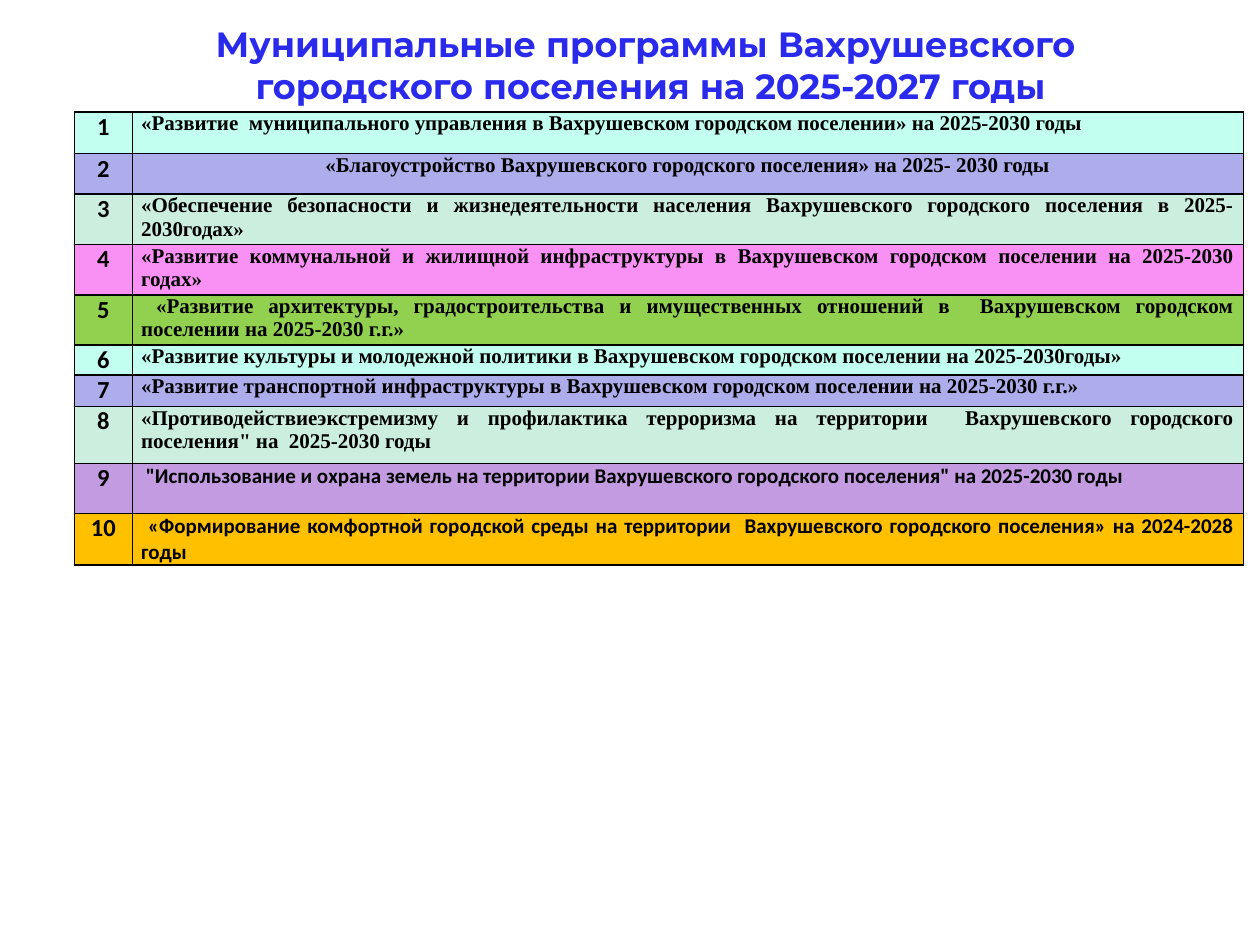
from lxml.etree import SubElement
from pptx import Presentation
from pptx.dml.color import RGBColor
from pptx.enum.text import MSO_ANCHOR, MSO_AUTO_SIZE, PP_ALIGN
from pptx.oxml.ns import qn
from pptx.util import Inches, Pt

BLACK = RGBColor(0x00, 0x00, 0x00)
BLUE = RGBColor(0x2A, 0x2A, 0xED)
AQUA = RGBColor(0xC2, 0xFF, 0xF0)
LAVENDER = RGBColor(0xAD, 0xAD, 0xEB)
MINT = RGBColor(0xCC, 0xEE, 0xDF)
PINK = RGBColor(0xF9, 0x91, 0xF4)
GREEN = RGBColor(0x92, 0xD0, 0x50)
PURPLE = RGBColor(0xC3, 0x9B, 0xE1)
AMBER = RGBColor(0xFF, 0xC0, 0x00)

SERIF, SANS = "Times New Roman", "Calibri"
CENTER, JUSTIFY = PP_ALIGN.CENTER, PP_ALIGN.JUSTIFY

TITLE = "Муниципальные программы Вахрушевского\n городского поселения на 2025-2027 годы"
PROGRAMMES = [
    (0.33, AQUA, SERIF, JUSTIFY, "«Развитие  муниципального управления в Вахрушевском городском поселении» на 2025-2030 годы"),
    (0.32, LAVENDER, SERIF, CENTER, "«Благоустройство Вахрушевского городского поселения» на 2025- 2030 годы"),
    (0.4, MINT, SERIF, JUSTIFY, "«Обеспечение безопасности и жизнедеятельности населения Вахрушевского городского поселения в 2025-2030годах»"),
    (0.4, PINK, SERIF, JUSTIFY, "«Развитие коммунальной и жилищной инфраструктуры в Вахрушевском городском поселении на 2025-2030 годах»"),
    (0.4, GREEN, SERIF, JUSTIFY, " «Развитие архитектуры, градостроительства и имущественных отношений в  Вахрушевском городском поселении на 2025-2030 г.г.»"),
    (0.23, AQUA, SERIF, JUSTIFY, "«Развитие культуры и молодежной политики в Вахрушевском городском поселении на 2025-2030годы»"),
    (0.25, LAVENDER, SERIF, JUSTIFY, "«Развитие транспортной инфраструктуры в Вахрушевском городском поселении на 2025-2030 г.г.»"),
    (0.45, MINT, SERIF, JUSTIFY, "«Противодействиеэкстремизму и профилактика терроризма на территории  Вахрушевского городского поселения\" на  2025-2030 годы"),
    (0.4, PURPLE, SANS, JUSTIFY, " \"Использование и охрана земель на территории Вахрушевского городского поселения\" на 2025-2030 годы"),
    (0.4, AMBER, SANS, JUSTIFY, " «Формирование комфортной городской среды на территории  Вахрушевского городского поселения» на 2024-2028 годы"),
]


def format_text(tf, font, size, color, align):
    """Apply one bold font and alignment to all the text in a frame."""
    for p in tf.paragraphs:
        p.alignment = align
        for r in p.runs:
            r.font.name = font
            r.font.size = Pt(size)
            r.font.bold = True
            r.font.color.rgb = color


def add_title(s):
    """Place and format the slide title."""
    sp = s.shapes.title
    sp.left, sp.top = Inches(0.91), Inches(0.13)
    sp.width, sp.height = Inches(8.43), Inches(0.77)
    tf = sp.text_frame
    tf.text = TITLE
    tf.word_wrap = True
    tf.auto_size = MSO_AUTO_SIZE.NONE
    tf.vertical_anchor = MSO_ANCHOR.TOP
    format_text(tf, "Montserrat", 20, BLUE, CENTER)


def set_borders(cell):
    """Draw a thin black line on every side of a cell."""
    tcPr = cell._tc.get_or_add_tcPr()
    for side in ("a:lnL", "a:lnR", "a:lnT", "a:lnB"):
        ln = SubElement(tcPr, qn(side), w=str(Pt(1)))
        fill = SubElement(ln, qn("a:solidFill"))
        SubElement(fill, qn("a:srgbClr"), val=str(BLACK))


def fill_cell(cell, text, font, size, align, fill):
    """Write one table cell with its borders and fill."""
    cell.margin_left = cell.margin_right = Inches(0.07)
    cell.margin_top = cell.margin_bottom = 0
    set_borders(cell)
    cell.fill.solid()
    cell.fill.fore_color.rgb = fill
    tf = cell.text_frame
    tf.text = text
    format_text(tf, font, size, BLACK, align)
    tf.paragraphs[0].space_after = Pt(0 if text.startswith("«Благо") else 10)


def add_programmes(s):
    """Add the numbered table of programmes."""
    height = sum(row[0] for row in PROGRAMMES)
    table = s.shapes.add_table(len(PROGRAMMES), 2, Inches(0.59), Inches(0.89),
                               Inches(9.28), Inches(height)).table
    table.first_row = table.horz_banding = False
    table.columns[0].width = Inches(0.46)
    table.columns[1].width = Inches(8.82)
    for i, (row_height, fill, font, align, text) in enumerate(PROGRAMMES):
        table.rows[i].height = Inches(row_height)
        fill_cell(table.cell(i, 0), str(i + 1), SANS, 14, CENTER, fill)
        fill_cell(table.cell(i, 1), text, font, 12, align, fill)


def main():
    """Build and save the slide."""
    prs = Presentation()
    prs.slide_width, prs.slide_height = Inches(10), Inches(7.5)
    s = prs.slides.add_slide(prs.slide_layouts[5])
    add_programmes(s)
    add_title(s)
    prs.save("out.pptx")


if __name__ == "__main__":
    main()
